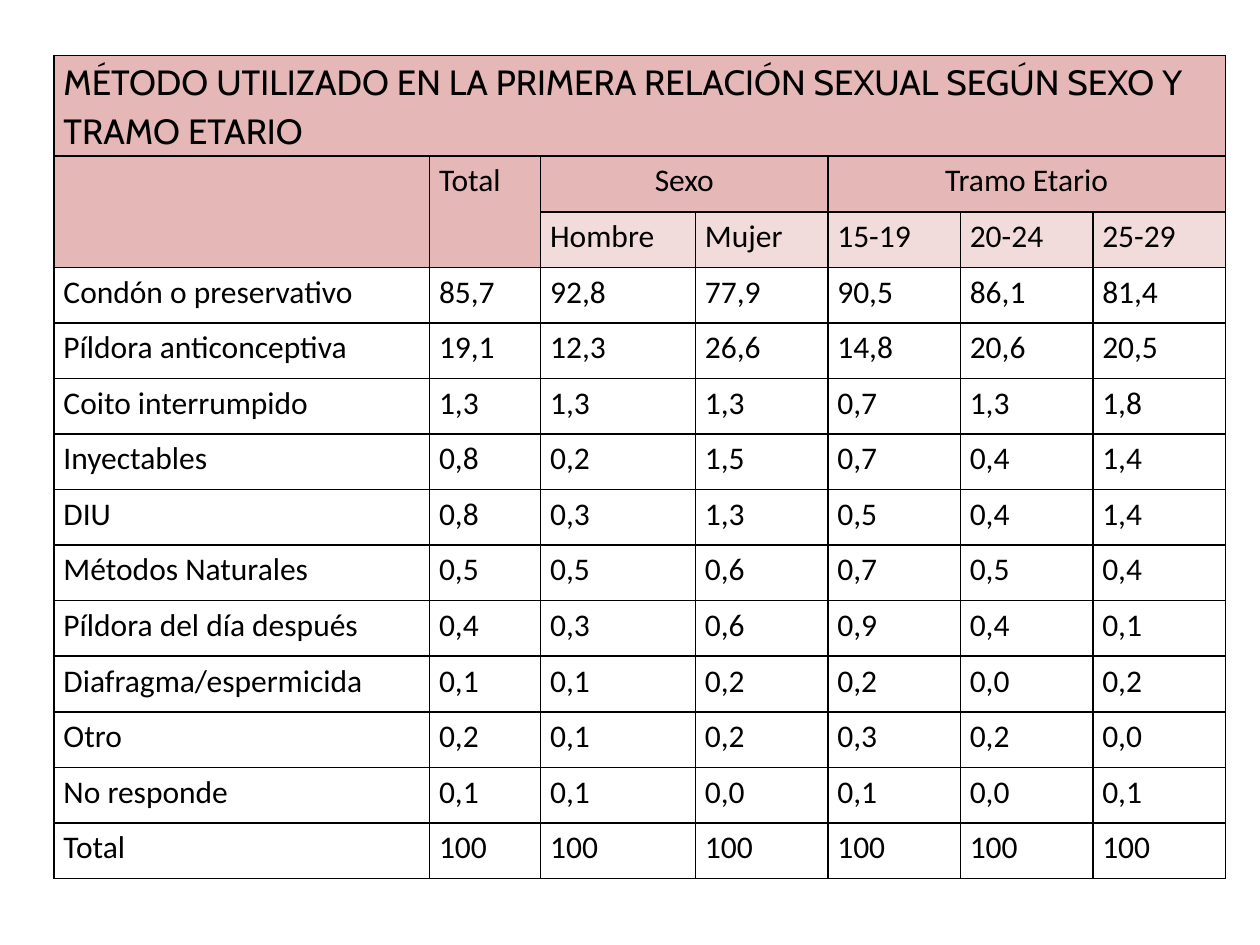
from dataclasses import dataclass

from lxml import etree
from pptx import Presentation
from pptx import util as u
from pptx.dml.color import RGBColor
from pptx.enum import text
from pptx.oxml import ns

ROSE, PALE, BLACK = "E5B8B7", "F2DBDB", "000000"
COLS = [7.57, 2.24, 3.12] + [2.67] * 4
ROWS = [2.03] + [1.12] * 13
LEFT, TOP = 1.09, 1.12

TITLE = "MÉTODO UTILIZADO EN LA PRIMERA RELACIÓN SEXUAL SEGÚN SEXO Y TRAMO ETARIO"
GROUPS = ["Hombre", "Mujer", "15-19", "20-24", "25-29"]
METHODS = [
    ("Condón o preservativo", "85,7 92,8 77,9 90,5 86,1 81,4"),
    ("Píldora anticonceptiva", "19,1 12,3 26,6 14,8 20,6 20,5"),
    ("Coito interrumpido", "1,3 1,3 1,3 0,7 1,3 1,8"),
    ("Inyectables", "0,8 0,2 1,5 0,7 0,4 1,4"),
    ("DIU", "0,8 0,3 1,3 0,5 0,4 1,4"),
    ("Métodos Naturales", "0,5 0,5 0,6 0,7 0,5 0,4"),
    ("Píldora del día después", "0,4 0,3 0,6 0,9 0,4 0,1"),
    ("Diafragma/espermicida", "0,1 0,1 0,2 0,2 0,0 0,2"),
    ("Otro", "0,2 0,1 0,2 0,3 0,2 0,0"),
    ("No responde", "0,1 0,1 0,0 0,1 0,0 0,1"),
    ("Total", "100 100 100 100 100 100"),
]


@dataclass
class Entry:
    row: int
    col: int
    label: str
    fill: str = ""
    rows: int = 1
    cols: int = 1
    centred: bool = False
    font: str = "Calibri"
    size: int = 18


def paint(fmt, colour: str) -> None:
    fmt.solid()
    fmt.fore_color.rgb = RGBColor.from_string(colour)


def add_borders(cell) -> None:
    props = cell._tc.get_or_add_tcPr()
    for side in ("lnL", "lnR", "lnT", "lnB"):
        ln = etree.SubElement(props, ns.qn(f"a:{side}"), w=str(u.Pt(1)))
        fill = etree.SubElement(ln, ns.qn("a:solidFill"))
        etree.SubElement(fill, ns.qn("a:srgbClr"), val=BLACK)


def fill_cell(table, e: Entry) -> None:
    cell = table.cell(e.row, e.col)
    if e.rows > 1 or e.cols > 1:
        cell.merge(table.cell(e.row + e.rows - 1, e.col + e.cols - 1))
    if e.fill:
        paint(cell.fill, e.fill)
    if not e.label:
        return
    cell.margin_left = cell.margin_right = u.Cm(0.19)
    cell.margin_top = cell.margin_bottom = u.Cm(0)
    p = cell.text_frame.paragraphs[0]
    p.line_spacing = 1.15
    p.alignment = text.PP_ALIGN.CENTER if e.centred else text.PP_ALIGN.LEFT
    r = p.add_run()
    r.text = e.label
    r.font.name = e.font
    r.font.size = u.Pt(e.size)
    paint(r.font.fill, BLACK)


def build_entries() -> list[Entry]:
    entries = [
        Entry(0, 0, TITLE, ROSE, cols=7, font="Cabin", size=20),
        Entry(1, 0, "", ROSE, rows=2),
        Entry(1, 1, "Total", ROSE, rows=2),
        Entry(1, 2, "Sexo", ROSE, cols=2, centred=True),
        Entry(1, 4, "Tramo Etario", ROSE, cols=3, centred=True),
    ]
    entries += [Entry(2, c, g, PALE) for c, g in enumerate(GROUPS, 2)]
    for row, (method, values) in enumerate(METHODS, 3):
        labels = [method, *values.split()]
        entries += [Entry(row, c, label) for c, label in enumerate(labels)]
    return entries


def main() -> None:
    prs = Presentation()
    prs.slide_width, prs.slide_height = u.Cm(25.4), u.Cm(19.05)
    s = prs.slides.add_slide(prs.slide_layouts[6])
    frame = s.shapes.add_table(
        len(ROWS), len(COLS), u.Cm(LEFT), u.Cm(TOP), u.Cm(sum(COLS)), u.Cm(sum(ROWS))
    )
    table = frame.table
    table.first_row = table.horz_banding = False
    for column, width in zip(table.columns, COLS):
        column.width = u.Cm(width)
    for row, height in zip(table.rows, ROWS):
        row.height = u.Cm(height)
    for cell in table.iter_cells():
        add_borders(cell)
        cell.fill.background()
    for entry in build_entries():
        fill_cell(table, entry)
    prs.save("out.pptx")


if __name__ == "__main__":
    main()
